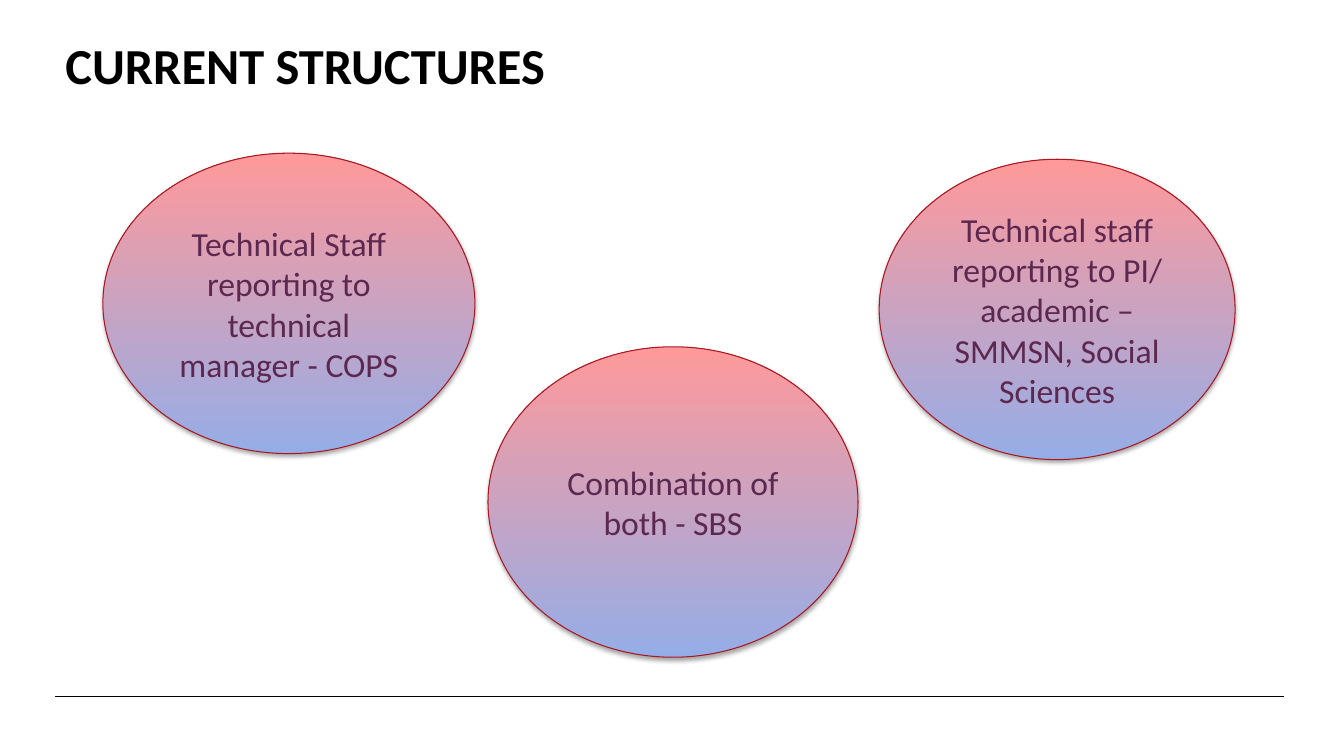
from lxml import etree
from pptx import Presentation
from pptx.dml.color import RGBColor
from pptx.enum.shapes import MSO_CONNECTOR, MSO_SHAPE
from pptx.enum.text import MSO_ANCHOR, PP_ALIGN
from pptx.oxml import parse_xml
from pptx.oxml.ns import nsdecls, qn
from pptx.util import Pt

PX = 9144
FONT = "Calibri"
BLACK = RGBColor(0x00, 0x00, 0x00)
PLUM = RGBColor(0x5C, 0x28, 0x4F)
BLUE = RGBColor(0x95, 0xAD, 0xE7)
PINK = RGBColor(0xFF, 0x99, 0x9A)
RED = RGBColor(0xAB, 0x16, 0x20)
OVAL = MSO_SHAPE.OVAL
LINE = MSO_CONNECTOR.STRAIGHT
MIDDLE = MSO_ANCHOR.MIDDLE
LEFT = PP_ALIGN.LEFT
CENTER = PP_ALIGN.CENTER

SHADOW = f"""<a:effectLst {nsdecls("a")}>
<a:outerShdw blurRad="39370" dist="22860" dir="5400000" rotWithShape="0">
<a:srgbClr val="000000"><a:alpha val="35000"/></a:srgbClr>
</a:outerShdw></a:effectLst>"""

GROUPS = [
    ("Technical Staff reporting to technical manager - COPS", (102, 152, 369, 298)),
    ("Technical staff reporting to PI/ academic – SMMSN, Social Sciences",
     (872, 158, 353, 298)),
    ("Combination of both - SBS", (484, 344, 367, 308)),
]


def scale(box):
    return [n * PX for n in box]


def write(shape, text, size, color, align, bold=False):
    frame = shape.text_frame
    frame.word_wrap = True
    frame.vertical_anchor = MIDDLE
    para = frame.paragraphs[0]
    para.text = text
    para.alignment = align
    font = para.font
    font.name = FONT
    font.size = Pt(size)
    font.bold = bold
    font.color.rgb = color


def add_title(slide, text, box):
    shape = slide.shapes.add_textbox(*scale(box))
    write(shape, text, 36, BLACK, LEFT, True)


def add_rule(slide, ends):
    rule = slide.shapes.add_connector(LINE, *scale(ends))
    rule.line.color.rgb = BLACK
    rule.line.width = Pt(0.75)
    etree.SubElement(rule._element.spPr, qn("a:effectLst"))


def add_oval(slide, text, box):
    oval = slide.shapes.add_shape(OVAL, *scale(box))
    fill = oval.fill
    fill.gradient()
    fill.gradient_angle = 90
    for stop, color in zip(fill.gradient_stops, (BLUE, PINK)):
        stop.color.rgb = color
    oval.line.color.rgb = RED
    oval.line.width = Pt(0.75)
    oval._element.spPr.append(parse_xml(SHADOW))
    write(oval, text, 24, PLUM, CENTER)


def main():
    deck = Presentation()
    deck.slide_width, deck.slide_height = scale((1333, 750))
    slide = deck.slides.add_slide(deck.slide_layouts[6])
    add_rule(slide, (55, 691, 1273, 691))
    add_title(slide, "CURRENT STRUCTURES", (55, 28, 937, 71))
    for text, box in GROUPS:
        add_oval(slide, text, box)
    deck.save("out.pptx")


if __name__ == "__main__":
    main()
